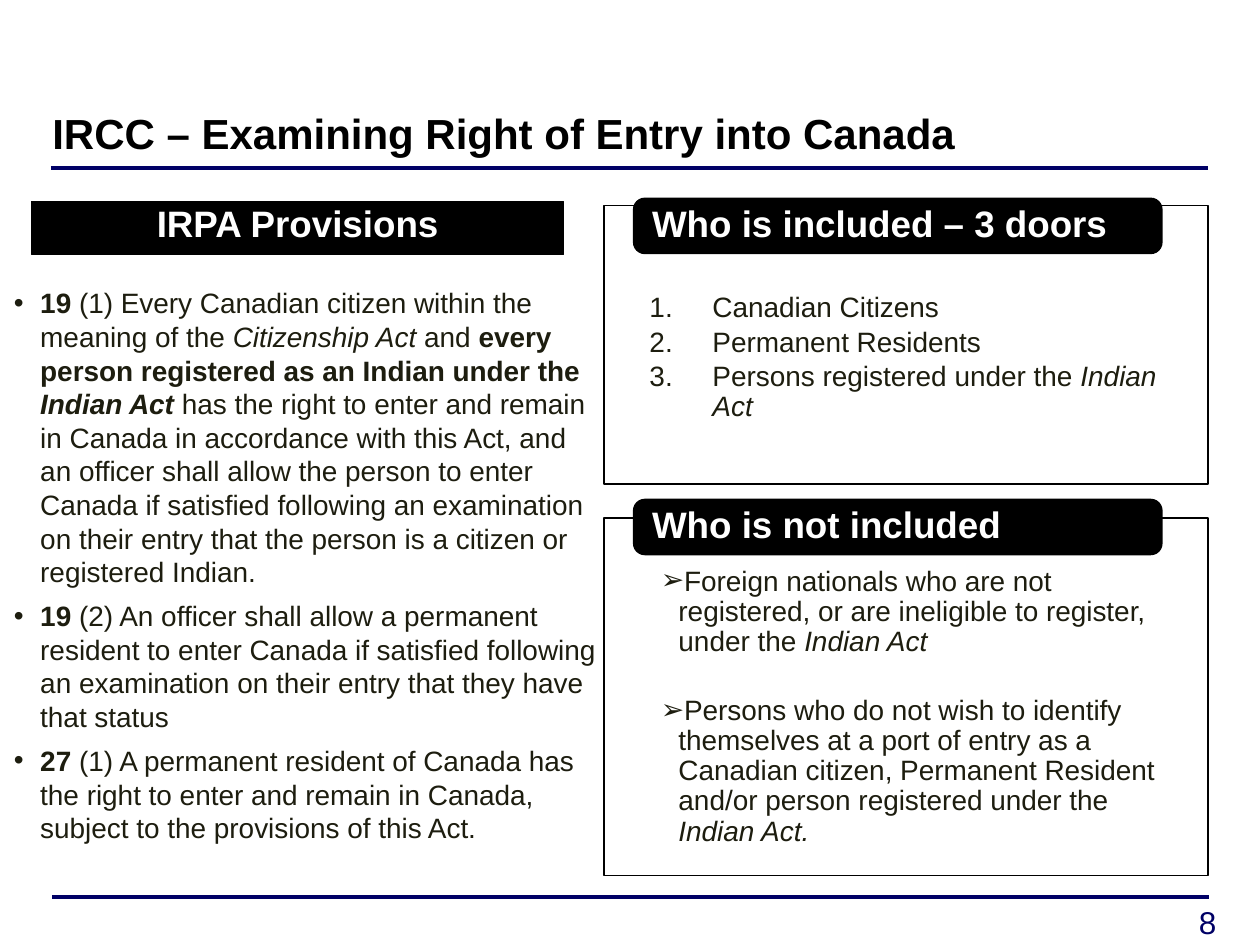
"""Build the slide on examining the right of entry into Canada."""
from lxml.etree import SubElement
from pptx import Presentation
from pptx.dml.color import RGBColor
from pptx.enum.shapes import MSO_CONNECTOR as Connector, MSO_SHAPE as Shape
from pptx.enum.text import MSO_ANCHOR as Anchor, MSO_AUTO_SIZE as AutoSize, PP_ALIGN as Align
from pptx.oxml.ns import qn
from pptx.util import Inches, Pt

COLOURS = {"navy": "000066", "black": "000000", "white": "FFFFFF", "ink": "1D1D0F"}
FONT = "Arial"
CELL = Inches(0.1)
COLUMNS, ROWS = 100, 75


def prepare(shape, margins, anchor=Anchor.TOP, fill=None, line=1):
    """Set the frame, and the fill and outline where a fill is named."""
    if fill:
        shape.shadow.inherit = False
        shape.fill.solid()
        shape.fill.fore_color.rgb = RGBColor.from_string(COLOURS[fill])
        shape.line.color.rgb = RGBColor.from_string(COLOURS["black"])
        shape.line.width = Pt(line)
    frame = shape.text_frame
    frame.word_wrap = True
    frame.auto_size = AutoSize.NONE
    frame.vertical_anchor = anchor
    frame.margin_left, frame.margin_top, frame.margin_right, frame.margin_bottom = (
        Inches(margin) for margin in margins)
    return frame


def write(frame, paragraphs, size, colour, align=Align.LEFT, spacing=0.9, after=0,
          bullet=None, indent=(0, 0)):
    """Write paragraphs made of (text, style) runs, where style holds b and i."""
    for index, runs in enumerate(paragraphs):
        para = frame.paragraphs[0] if index == 0 else frame.add_paragraph()
        para.alignment = align
        para.line_spacing = spacing
        para.space_before = Pt(0)
        para.space_after = Pt(after)
        if bullet:
            props = para._p.get_or_add_pPr()
            props.set("marL", str(Inches(indent[0])))
            props.set("indent", str(Inches(indent[1])))
            SubElement(props, qn("a:buFont"), typeface=FONT)
            if bullet == "1.":
                SubElement(props, qn("a:buAutoNum"), type="arabicPeriod")
            else:
                SubElement(props, qn("a:buChar"), char=bullet)
        for text, style in runs:
            span = para.add_run()
            span.text = text
            span.font.name = FONT
            span.font.size = Pt(size)
            span.font.bold = "b" in style
            span.font.italic = "i" in style
            span.font.color.rgb = RGBColor.from_string(COLOURS[colour])


deck = Presentation()
deck.slide_width, deck.slide_height = COLUMNS * CELL, ROWS * CELL
page = deck.slides.add_slide(deck.slide_layouts[5])
shapes = page.shapes

for left, row in ((4.05, 13.35), (4.15, 71.2)):
    ends = [int(CELL * place) for place in (left, row, left + 91.8, row)]
    rule = shapes.add_connector(Connector.STRAIGHT, *ends)
    rule.line.color.rgb = RGBColor.from_string(COLOURS["navy"])
    rule.line.width = Pt(2)
    SubElement(rule._element.spPr, qn("a:effectLst"))

title = shapes.title
title.left, title.top, title.width, title.height = (
    int(CELL * place) for place in (4.15, 9.2, 91.7, 3.3))
write(prepare(title, (0, 0, 0, 0)),
      [[("IRCC – Examining Right of Entry into Canada", "b")]],
      24, "black", spacing=Pt(24))

number = shapes.add_textbox(*(int(CELL * place) for place in (91.7, 71.2, 8.3, 3.3)))
write(prepare(number, (0.1, 0.05, 0.1, 0)), [[("8", "")]], 18, "navy",
      align=Align.CENTER, spacing=1.0)

included = [
    [("Canadian Citizens", "")],
    [("Permanent Residents", "")],
    [("Persons registered under the ", ""), ("Indian Act", "i")],
]
excluded = [
    [("Foreign nationals who are not registered, or are ineligible to register, under the ", ""),
     ("Indian Act", "i")],
    [("Persons who do not wish to identify themselves at a port of entry as a Canadian citizen, "
      "Permanent Resident and/or person registered under the ", ""),
     ("Indian Act.", "i")],
]
panels = [
    ("Who is included – 3 doors", 15.75, 16.3, 22.1, included, 0.7, "1.", (0.5, -0.5), 2.4),
    ("Who is not included", 39.65, 41.1, 28.4, excluded, 0.39, "➢", (0.23, -0.14), 22),
]
for heading, tab_row, row, height, items, inset, bullet, indent, after in panels:
    panel = shapes.add_shape(
        Shape.RECTANGLE, *(int(CELL * place) for place in (47.95, row, 47.9, height)))
    frame = prepare(panel, (0.36, inset, 0.36, 0.09), fill="white")
    SubElement(panel._element.spPr.find(".//" + qn("a:srgbClr")), qn("a:alpha"), val="90000")
    write(frame, items, 16, "ink", after=after, bullet=bullet, indent=indent)
    tab = shapes.add_shape(
        Shape.ROUNDED_RECTANGLE, *(int(CELL * place) for place in (50.3, tab_row, 41.9, 4.35)))
    tab.adjustments[0] = 0.2
    write(prepare(tab, (0.12, 0.02, 0.12, 0.02), Anchor.MIDDLE, "black"),
          [[(heading, "b")]], 21, "white")

banner = shapes.add_shape(
    Shape.RECTANGLE, *(int(CELL * place) for place in (2.5, 16, 42.25, 4.2)))
write(prepare(banner, (0.07, 0.03, 0.07, 0.04), fill="black", line=0.75),
      [[("IRPA Provisions", "b")]], 21, "white", align=Align.CENTER)

provisions = [
    [("19", "b"),
     (" (1) Every Canadian citizen within the meaning of the ", ""),
     ("Citizenship Act", "i"),
     (" and ", ""),
     ("every person registered as an Indian under the ", "b"),
     ("Indian Act", "bi"),
     (" has the right to enter and remain in Canada in accordance with this Act, and an officer "
      "shall allow the person to enter Canada if satisfied following an examination on their "
      "entry that the person is a citizen or registered Indian.", "")],
    [("19 ", "b"),
     ("(2) An officer shall allow a permanent resident to enter Canada if satisfied following "
      "an examination on their entry that they have that status", "")],
    [("27", "b"),
     (" (1) A permanent resident of Canada has the right to enter and remain in Canada, "
      "subject to the provisions of this Act.", "")],
]
body = shapes.add_textbox(*(int(CELL * place) for place in (1.1, 22.7, 46.7, 45)))
write(prepare(body, (0, 0, 0, 0)), provisions, 16, "ink", spacing=1.0, after=6,
      bullet="•", indent=(0.21, -0.21))

deck.save("out.pptx")
